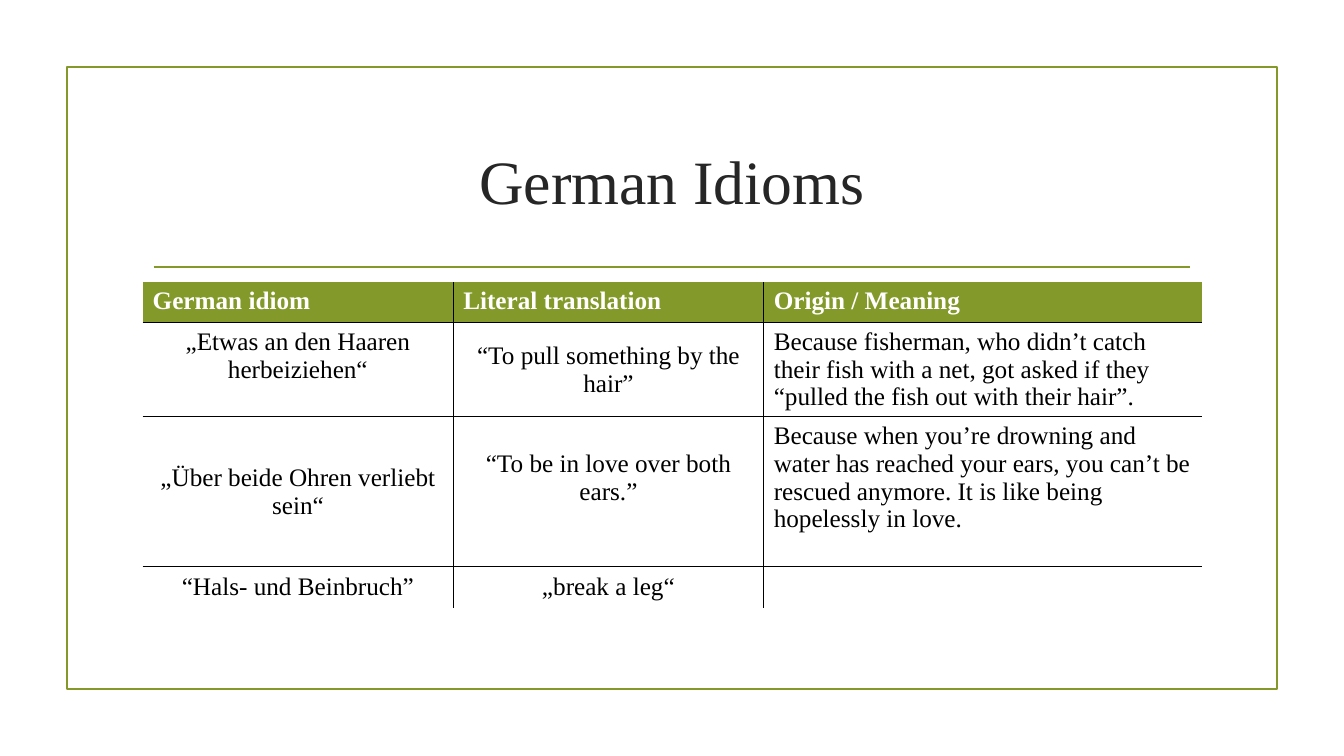
from lxml import etree
from pptx import Presentation
from pptx.dml.color import RGBColor
from pptx.enum.shapes import MSO_CONNECTOR, MSO_SHAPE
from pptx.enum.text import MSO_ANCHOR, PP_ALIGN
from pptx.oxml.ns import qn
from pptx.util import Inches, Pt

CENTER, LEFT = PP_ALIGN.CENTER, PP_ALIGN.LEFT
MIDDLE, TOP = MSO_ANCHOR.MIDDLE, MSO_ANCHOR.TOP

# Content
TITLE = "German Idioms"
IDIOMS = [
    ("German idiom", "Literal translation", "Origin / Meaning"),
    ("„Etwas an den Haaren herbeiziehen“", "“To pull something by the hair”",
     "Because fisherman, who didn’t catch their fish with a net, got asked if they "
     "“pulled the fish out with their hair”."),
    ("„Über beide Ohren verliebt sein“", "“To be in love over both ears.”",
     "Because when you’re drowning and water has reached your ears, you can’t be "
     "rescued anymore. It is like being hopelessly in love."),
    ("“Hals- und Beinbruch”", "„break a leg“", ""),
]

# Design
FONT = "Times New Roman"
GREEN, INK, BLACK, WHITE = "83992A", "262626", "000000", "FFFFFF"
SLIDE_W, SLIDE_H = 13.33, 7.5
CONTENT_W = 10.5
CONTENT_X = (SLIDE_W - CONTENT_W) / 2
FRAME_W, FRAME_H = 12, 6.17
RULE_W, RULE_Y = 10.28, 2.65
COLUMNS = (3.08, 3.08, 4.35)
ROWS = (0.4, 0.93, 1.49, 0.4)
LINE_H = 0.28
RAISED = {(1, 0), (2, 1)}  # cells whose text sits half a line above the middle
NO_GRID_STYLE = "{2D5ABB26-0587-4C30-8999-92F81FD0307C}"


def color(value):
    return RGBColor.from_string(value)


def set_font(paragraph, size, ink, bold=False):
    for run in paragraph.runs:
        run.font.name = FONT
        run.font.size = Pt(size)
        run.font.bold = bold
        run.font.color.rgb = color(ink)


def add_border(cell, side):
    edge = etree.SubElement(cell._tc.get_or_add_tcPr(), qn(f"a:ln{side}"), w=str(Pt(1)))
    paint = etree.SubElement(edge, qn("a:solidFill"))
    etree.SubElement(paint, qn("a:srgbClr"), val=BLACK)


def style_line(line):
    line.color.rgb = color(GREEN)
    line.width = Pt(1.25)


prs = Presentation()
prs.slide_width, prs.slide_height = Inches(SLIDE_W), Inches(SLIDE_H)
slide = prs.slides.add_slide(prs.slide_layouts[5])

# Frame
frame = slide.shapes.add_shape(
    MSO_SHAPE.RECTANGLE, Inches((SLIDE_W - FRAME_W) / 2), Inches((SLIDE_H - FRAME_H) / 2),
    Inches(FRAME_W), Inches(FRAME_H))
frame.shadow.inherit = False
frame.fill.background()
style_line(frame.line)

# Rule under the title
rule_x = (SLIDE_W - RULE_W) / 2
rule = slide.shapes.add_connector(
    MSO_CONNECTOR.STRAIGHT, Inches(rule_x), Inches(RULE_Y),
    Inches(rule_x + RULE_W), Inches(RULE_Y))
style_line(rule.line)
etree.SubElement(rule._element.spPr, qn("a:effectLst"))

# Title
title = slide.shapes.title
title.left, title.top = Inches(CONTENT_X), Inches(1.07)
title.width, title.height = Inches(CONTENT_W), Inches(1.43)
title.text_frame.text = TITLE
title.text_frame.vertical_anchor = MIDDLE
heading = title.text_frame.paragraphs[0]
heading.alignment = CENTER
set_font(heading, 44, INK)

# Idiom table
table_frame = slide.shapes.add_table(
    len(ROWS), len(COLUMNS), Inches(CONTENT_X), Inches(2.8),
    Inches(sum(COLUMNS)), Inches(sum(ROWS)))
table = table_frame.table
table.horz_banding = False
table._tbl.tblPr.find(qn("a:tableStyleId")).text = NO_GRID_STYLE
for column, width in zip(table.columns, COLUMNS):
    column.width = Inches(width)
for row, height in zip(table.rows, ROWS):
    row.height = Inches(height)

last_row, last_col = len(ROWS) - 1, len(COLUMNS) - 1
for r, entries in enumerate(IDIOMS):
    for c, entry in enumerate(entries):
        cell = table.cell(r, c)
        is_header = r == 0
        is_centered = not is_header and c < last_col
        cell.text_frame.text = entry
        cell.vertical_anchor = MIDDLE if is_centered else TOP
        if (r, c) in RAISED:
            cell.margin_bottom = Inches(0.05 + LINE_H)
        paragraph = cell.text_frame.paragraphs[0]
        paragraph.alignment = CENTER if is_centered else LEFT
        set_font(paragraph, 18, WHITE if is_header else BLACK, is_header)

        # Inner grid lines only
        inner = {"L": c > 0, "R": c < last_col, "T": r > 0, "B": r < last_row}
        for side, shown in inner.items():
            if shown:
                add_border(cell, side)
        if is_header:
            cell.fill.solid()
            cell.fill.fore_color.rgb = color(GREEN)
        else:
            cell.fill.background()

prs.save("out.pptx")
